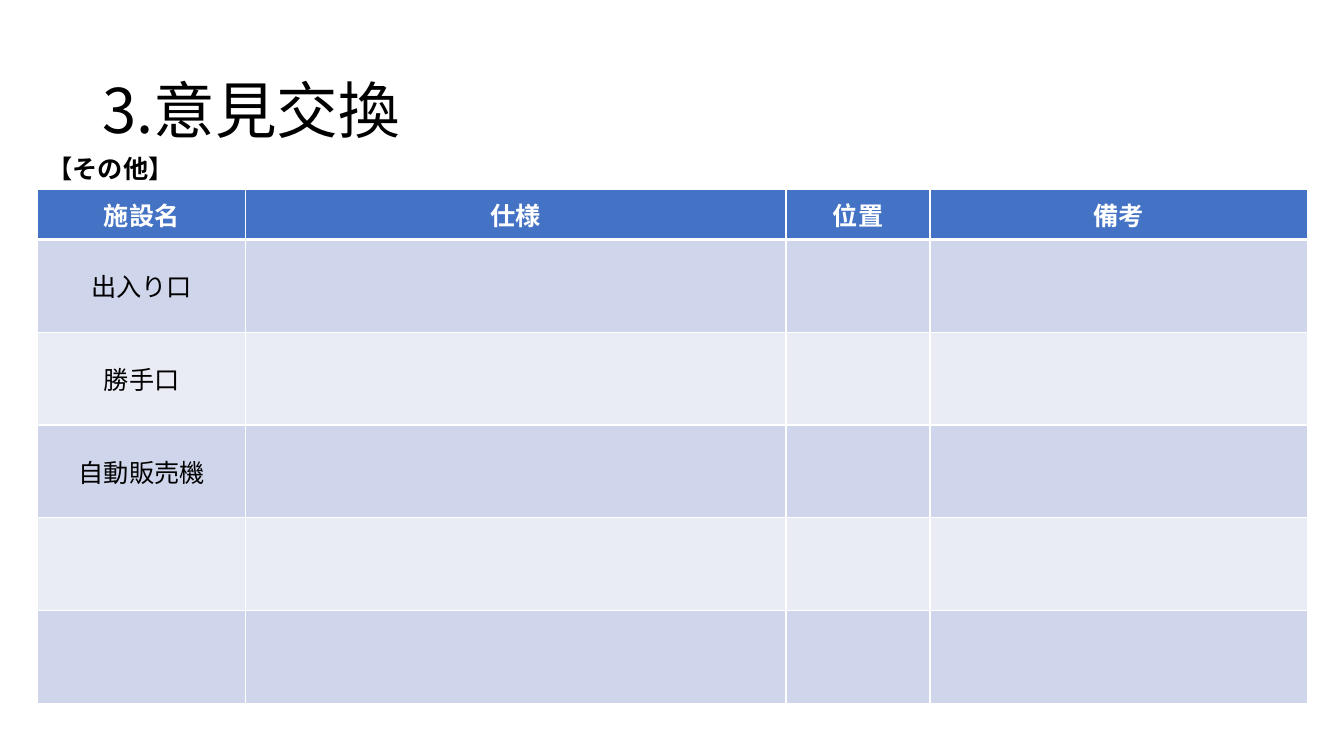
from lxml.etree import SubElement
from pptx import Presentation
from pptx.dml.color import RGBColor
from pptx.enum.text import MSO_ANCHOR as Anchor, PP_ALIGN as Align
from pptx.oxml.ns import qn
from pptx.util import Pt

TITLE = "3.意見交換"
LABEL = "【その他】"
HEADINGS = ["施設名", "仕様", "位置", "備考"]
FACILITIES = ["出入り口", "勝手口", "自動販売機", "", ""]

FONT = "Noto Sans CJK JP"
COLORS = {
    "text": "000000",
    "white": "FFFFFF",
    "header": "4472C4",
    "odd": "CFD5EA",
    "even": "E9EBF5",
}
SLIDE_SIZE = (960, 540)
TITLE_BOX = (66, 28.75, 828, 104.4)
LABEL_BOX = (26.9, 105.8, 480, 29)
TABLE_ORIGIN = (26.9, 135)
COLUMN_WIDTHS = [148.5, 386, 103, 269.5]
HEADER_HEIGHT, ROW_HEIGHT = 36, 66.3
THIN, THICK = 1, 3


def write(frame, text, size, color="text", bold=False, align=Align.LEFT):
    para = frame.paragraphs[0]
    para.alignment = align
    span = para.add_run()
    span.text = text
    span.font.color.rgb = RGBColor.from_string(COLORS[color])
    for name, value in {"size": Pt(size), "bold": bold, "name": FONT}.items():
        setattr(span.font, name, value)
    SubElement(span.font._element, qn("a:ea"), typeface=FONT)
    return para


def add_borders(cell, top, bottom):
    properties = cell._tc.get_or_add_tcPr()
    for side, width in {"L": THIN, "R": THIN, "T": top, "B": bottom}.items():
        line = SubElement(properties, qn(f"a:ln{side}"), w=str(Pt(width)))
        fill = SubElement(line, qn("a:solidFill"))
        SubElement(fill, qn("a:srgbClr"), val=COLORS["white"])


def add_title(page):
    title = page.shapes.title
    for name, value in zip(("left", "top", "width", "height"), TITLE_BOX):
        setattr(title, name, Pt(value))
    title.text_frame.vertical_anchor = Anchor.MIDDLE
    write(title.text_frame, TITLE, 44).line_spacing = 0.9


def add_facility_table(page):
    rows = [HEADINGS] + [[name, "", "", ""] for name in FACILITIES]
    heights = [HEADER_HEIGHT] + [ROW_HEIGHT] * len(FACILITIES)
    bounds = (*TABLE_ORIGIN, sum(COLUMN_WIDTHS), sum(heights))
    table = page.shapes.add_table(
        len(rows), len(HEADINGS), *map(Pt, bounds)
    ).table
    for column, width in zip(table.columns, COLUMN_WIDTHS):
        column.width = Pt(width)
    for row, height in zip(table.rows, heights):
        row.height = Pt(height)

    for r, texts in enumerate(rows):
        is_header = r == 0
        fill = "header" if is_header else "odd" if r % 2 else "even"
        top = THICK if r == 1 else THIN
        bottom = THICK if is_header else THIN
        for c, text in enumerate(texts):
            cell = table.cell(r, c)
            add_borders(cell, top, bottom)
            cell.fill.solid()
            cell.fill.fore_color.rgb = RGBColor.from_string(COLORS[fill])
            cell.vertical_anchor = Anchor.MIDDLE
            if text:
                color = "white" if is_header else "text"
                write(cell.text_frame, text, 18, color, is_header, Align.CENTER)


def add_label(page):
    box = page.shapes.add_textbox(*map(Pt, LABEL_BOX))
    box.text_frame.word_wrap = True
    write(box.text_frame, LABEL, 18, bold=True)


def main():
    deck = Presentation()
    deck.slide_width, deck.slide_height = map(Pt, SLIDE_SIZE)
    page = deck.slides.add_slide(deck.slide_layouts[5])
    add_title(page)
    add_facility_table(page)
    add_label(page)
    deck.save("out.pptx")


if __name__ == "__main__":
    main()
